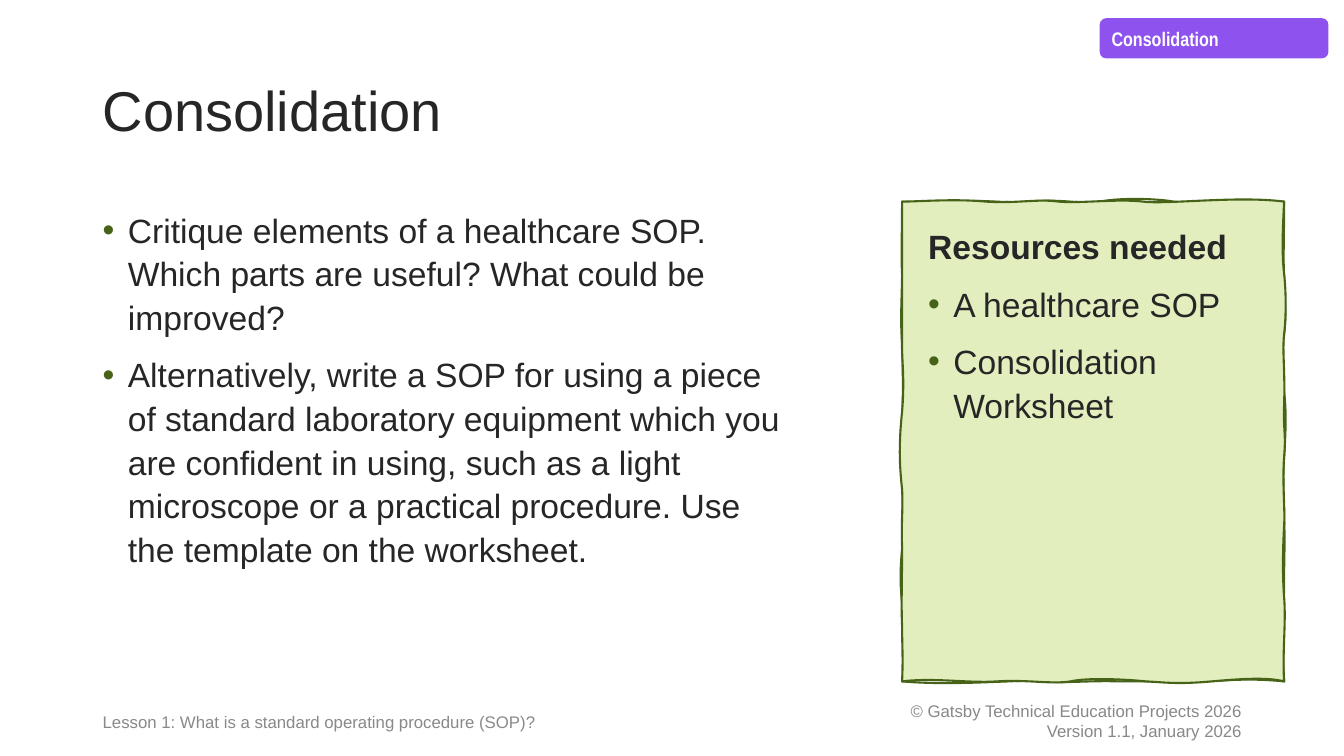
import pptx
import pptx.dml.color
import pptx.enum.shapes
import pptx.enum.text
import pptx.oxml
import pptx.oxml.ns
import pptx.util
from lxml import etree

Pt = pptx.util.Pt
ALIGN = pptx.enum.text.PP_ALIGN
ANCHOR = pptx.enum.text.MSO_ANCHOR
qn = pptx.oxml.ns.qn

INK, GREEN, PALE, PURPLE = "262626", "466318", "E2EEBE", "8E53EF"
LEFT = 66.24
FOOT_TOP, FOOT_H = 500.4, 28.8
BODY_TOP, BODY_H = 144, 342.72

# Hand-drawn outlines in hundredths of an inch: a start point, then
# one row per side with three points (two controls, one end) per curve
SKETCH_UNIT = 0.72
SKETCH_BACK = [
    (895, 200),
    (920, 202, 942, 202, 959, 200, 976, 198, 995, 202, 1024, 200,
     1052, 197, 1072, 203, 1092, 200, 1111, 196, 1148, 197, 1164, 200,
     1180, 203, 1235, 202, 1274, 200),
    (1274, 236, 1273, 255, 1274, 277, 1275, 299, 1276, 318, 1274, 331,
     1272, 344, 1272, 372, 1274, 389, 1276, 406, 1276, 423, 1274, 453,
     1272, 482, 1274, 493, 1274, 516, 1275, 538, 1274, 551, 1274, 574,
     1274, 597, 1272, 649, 1274, 676),
    (1234, 672, 1212, 676, 1191, 676, 1169, 676, 1142, 676, 1111, 676,
     1080, 675, 1057, 678, 1039, 676, 1020, 673, 953, 681, 895, 676),
    (898, 654, 896, 617, 895, 598, 893, 579, 893, 567, 895, 544,
     896, 522, 896, 506, 895, 472, 893, 438, 893, 430, 895, 418,
     896, 406, 896, 365, 895, 340, 893, 316, 895, 291, 895, 272,
     894, 254, 895, 228, 895, 200),
]
SKETCH_FRONT = [
    (895, 200),
    (912, 200, 946, 197, 978, 200, 1010, 202, 1029, 197, 1050, 200,
     1071, 202, 1109, 197, 1134, 200, 1158, 203, 1228, 194, 1274, 200),
    (1272, 236, 1272, 255, 1274, 272, 1276, 290, 1276, 314, 1274, 331,
     1272, 348, 1275, 366, 1274, 399, 1273, 432, 1276, 426, 1274, 453,
     1272, 479, 1275, 503, 1274, 521, 1273, 538, 1272, 568, 1274, 593,
     1276, 618, 1272, 650, 1274, 676),
    (1258, 672, 1236, 673, 1202, 676, 1168, 679, 1157, 677, 1137, 676,
     1118, 674, 1079, 672, 1062, 676, 1044, 679, 1018, 674, 989, 676,
     961, 678, 927, 672, 895, 676),
    (896, 651, 895, 642, 895, 622, 894, 601, 895, 572, 895, 544,
     894, 516, 896, 506, 895, 486, 893, 466, 891, 446, 895, 408,
     898, 371, 894, 357, 895, 331, 895, 304, 895, 244, 895, 200),
]


def rgb(value):
    return pptx.dml.color.RGBColor.from_string(value)


class Deck:
    """Holds the text style and the current slide."""

    font = "Arial"
    spacing = 1.08
    para_gap = 10
    indent = 18
    insets = {"margin_left": 7.2, "margin_right": 7.2,
              "margin_top": 3.6, "margin_bottom": 3.6}

    def __init__(self, width, height):
        self.prs = pptx.Presentation()
        self.prs.slide_width, self.prs.slide_height = Pt(width), Pt(height)
        self.s = self.prs.slides.add_slide(self.prs.slide_layouts[5])

    def bullet(self, p):
        pPr = p._p.get_or_add_pPr()
        pPr.set("marL", str(Pt(self.indent)))
        pPr.set("indent", str(-Pt(self.indent)))
        color = etree.SubElement(pPr, qn("a:buClr"))
        etree.SubElement(color, qn("a:srgbClr")).set("val", GREEN)
        etree.SubElement(pPr, qn("a:buFont")).set("typeface", self.font)
        etree.SubElement(pPr, qn("a:buChar")).set("char", "•")

    def fill_text(self, sp, lines, size, color=INK, font=None,
                  align=ALIGN.LEFT, anchor=ANCHOR.TOP, spacing=None, gap=0):
        """Fill a shape with lines of (text, bulleted, bold)."""
        tf = sp.text_frame
        frame = {name: Pt(v) for name, v in self.insets.items()}
        frame.update(word_wrap=True, vertical_anchor=anchor,
                     auto_size=pptx.enum.text.MSO_AUTO_SIZE.NONE)
        for name, value in frame.items():
            setattr(tf, name, value)
        for i, (text, bulleted, bold) in enumerate(lines):
            p = tf.paragraphs[0] if i == 0 else tf.add_paragraph()
            if bulleted:
                self.bullet(p)
            layout = {"alignment": align, "space_after": Pt(0),
                      "line_spacing": spacing or self.spacing,
                      "space_before": Pt(gap if i else 0)}
            for name, value in layout.items():
                setattr(p, name, value)
            r = p.add_run()
            r.text = text
            style = {"name": font or self.font, "size": Pt(size), "bold": bold}
            for name, value in style.items():
                setattr(r.font, name, value)
            r.font.color.rgb = rgb(color)

    def title(self, box, text, **style):
        sp = self.s.shapes.title
        for name, value in zip(("left", "top", "width", "height"), box):
            setattr(sp, name, Pt(value))
        self.fill_text(sp, [(text, False, False)], **style)

    def text(self, box, lines, **style):
        sp = self.s.shapes.add_textbox(*map(Pt, box))
        self.fill_text(sp, lines, **style)

    def badge(self, box, text, **style):
        kind = pptx.enum.shapes.MSO_SHAPE.FLOWCHART_ALTERNATE_PROCESS
        sp = self.s.shapes.add_shape(kind, *map(Pt, box))
        sp.shadow.inherit = False
        sp.fill.solid()
        sp.fill.fore_color.rgb = rgb(PURPLE)
        sp.line.fill.background()
        self.fill_text(sp, [(text, False, True)], **style)

    def sketch(self, rows, fill=None):
        """Draw a closed outline whose points form cubic curves."""
        start, *sides = rows
        flat = [v for side in sides for v in side]
        fb = self.s.shapes.build_freeform(*start, scale=Pt(SKETCH_UNIT))
        fb.add_line_segments(list(zip(flat[::2], flat[1::2])), close=True)
        sp = fb.convert_to_shape()
        # Join each three straight segments into one curve
        segments = sp._element.xpath(".//a:lnTo")
        for i in range(0, len(segments) - 2, 3):
            curve = etree.Element(qn("a:cubicBezTo"))
            segments[i].addprevious(curve)
            for segment in segments[i:i + 3]:
                curve.append(segment[0])
                segment.getparent().remove(segment)
        sp.shadow.inherit = False
        if fill:
            sp.fill.solid()
            sp.fill.fore_color.rgb = rgb(fill)
        else:
            sp.fill.background()
        sp.line.color.rgb = rgb(GREEN)
        sp.line.width = Pt(1.5)


def main():
    deck = Deck(960, 540)

    # Heading and section badge
    deck.badge((785.52, 12.96, 163.44, 28.8), "Consolidation",
               size=14, color="FFFFFF", font="Arial Narrow")
    deck.title((LEFT, 28.8, 828, 104.4), "Consolidation",
               size=40, anchor=ANCHOR.MIDDLE, spacing=0.9)

    # Tasks
    deck.text((LEFT, BODY_TOP, 507.6, BODY_H), [
        ("Critique elements of a healthcare SOP. Which parts are useful? "
         "What could be improved?", True, False),
        ("Alternatively, write a SOP for using a piece of standard laboratory "
         "equipment which you are confident in using, such as a light "
         "microscope or a practical procedure. Use the template on the "
         "worksheet.", True, False),
    ], size=24, gap=deck.para_gap)

    # Resources card
    deck.sketch(SKETCH_BACK)
    deck.sketch(SKETCH_FRONT, fill=PALE)
    deck.text((655.92, 155.52, 249.84, BODY_H), [
        ("Resources needed", False, True),
        ("A healthcare SOP", True, False),
        ("Consolidation Worksheet", True, False),
    ], size=24, gap=deck.para_gap)

    # Footer
    deck.text((LEFT, FOOT_TOP, 331.2, FOOT_H), [
        ("Lesson 1: What is a standard operating procedure (SOP)?",
         False, False),
    ], size=12, color="898989", anchor=ANCHOR.MIDDLE)
    deck.text((570.24, FOOT_TOP, 324, FOOT_H), [
        ("© Gatsby Technical Education Projects 2026", False, False),
        ("Version 1.1, January 2026", False, False),
    ], size=12, color="888888", align=ALIGN.RIGHT, anchor=ANCHOR.MIDDLE,
        spacing=1.0)

    deck.prs.save("out.pptx")


if __name__ == "__main__":
    main()
